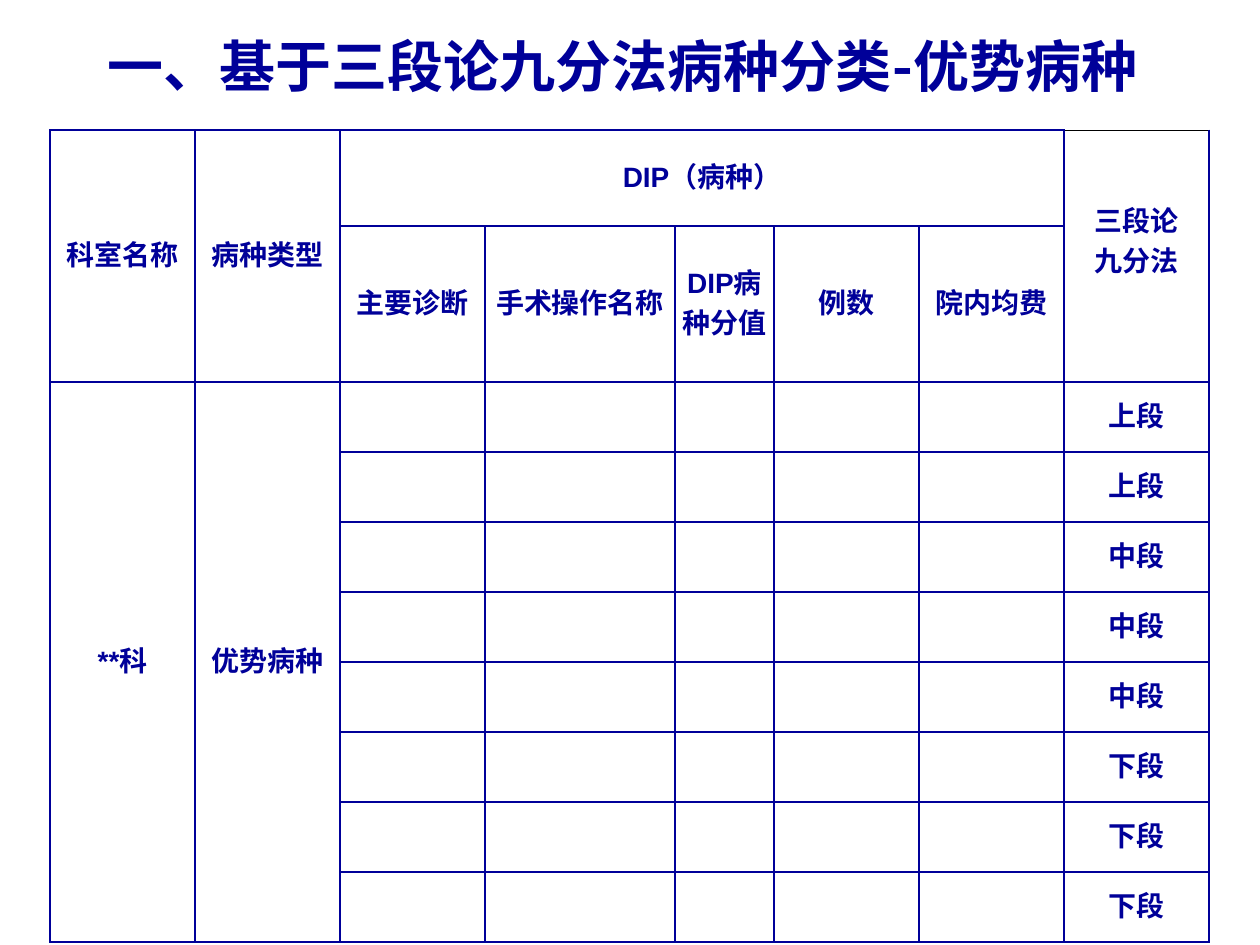
from lxml import etree
from pptx import Presentation
from pptx.dml.color import RGBColor
from pptx.enum.text import MSO_ANCHOR, PP_ALIGN
from pptx.oxml.ns import qn
from pptx.util import Emu, Pt

MIDDLE = MSO_ANCHOR.MIDDLE
CENTER = PP_ALIGN.CENTER
NAVY = RGBColor(0x00, 0x00, 0x99)
BLACK = RGBColor(0x00, 0x00, 0x00)
CJK = "Noto Sans CJK SC"
SCALE = 914400 / 126


def px(n):
    return Emu(round(n * SCALE))


def write(frame, text, size, face):
    """Fill a text frame with bold, centred navy text, one paragraph a line."""
    frame.text = text
    for para in frame.paragraphs:
        para.alignment = CENTER
        for run in para.runs:
            font = run.font
            for key, val in {"size": Pt(size), "name": face, "bold": True}.items():
                setattr(font, key, val)
            font.color.rgb = NAVY
            east = etree.SubElement(run._r.get_or_add_rPr(), qn("a:ea"))
            east.set("typeface", CJK)


prs = Presentation()
prs.slide_width, prs.slide_height = px(1260), px(945)
slide = prs.slides.add_slide(prs.slide_layouts[6])

# Title
title = slide.shapes.add_textbox(px(72), px(0), px(1101), px(137)).text_frame
title.word_wrap = True
title.vertical_anchor = MIDDLE
write(title, "一、基于三段论九分法病种分类-优势病种", 32, CJK)
title.paragraphs[0].line_spacing = Pt(35)

# Table grid
cols = [145, 145, 145, 190, 99, 145, 145, 145]
rows = [96, 156] + [70] * 8
frame = slide.shapes.add_table(
    len(rows), len(cols), px(50), px(130), px(sum(cols)), px(sum(rows)))
table = frame.table
table.first_row = table.horz_banding = False
for col, width in zip(table.columns, cols):
    col.width = px(width)
for row, height in zip(table.rows, rows):
    row.height = px(height)

# Fill, margins and borders
pads = {"margin_left": 1, "margin_right": 1, "margin_top": 1, "margin_bottom": 6}
last = len(cols) - 1
for r in range(len(rows)):
    for c in range(len(cols)):
        cell = table.cell(r, c)
        cell.fill.background()
        cell.vertical_anchor = MIDDLE
        for key, val in pads.items():
            setattr(cell, key, px(val))
        props = cell._tc.get_or_add_tcPr()
        for i, side in enumerate(("lnL", "lnR", "lnT", "lnB")):
            dark = side == "lnT" and (r, c) == (0, last)
            line = etree.Element(qn(f"a:{side}"), w=str(Pt(0.5 if dark else 1)))
            fill = etree.SubElement(line, qn("a:solidFill"))
            etree.SubElement(fill, qn("a:srgbClr"), val=str(BLACK if dark else NAVY))
            props.insert(i, line)

# Merged areas: top, left, bottom, right
for top, left, low, right in [(0, 0, 1, 0), (0, 1, 1, 1), (0, 2, 0, 6),
                              (0, last, 1, last), (2, 0, 9, 0), (2, 1, 9, 1)]:
    table.cell(top, left).merge(table.cell(low, right))

# Wording
words = {
    (0, 0): "科室名称", (0, 1): "病种类型", (0, 2): "DIP（病种）",
    (0, last): "三段论\n九分法", (2, 0): "**科", (2, 1): "优势病种",
}
heads = ["主要诊断", "手术操作名称", "DIP病种分值", "例数", "院内均费"]
words.update({(1, c): text for c, text in enumerate(heads, 2)})
tiers = ["上段"] * 2 + ["中段"] * 3 + ["下段"] * 3
words.update({(r, last): text for r, text in enumerate(tiers, 2)})
for (r, c), text in words.items():
    write(table.cell(r, c).text_frame, text, 16, "Arial")
table.cell(0, last).margin_bottom = px(34)

prs.save("out.pptx")
